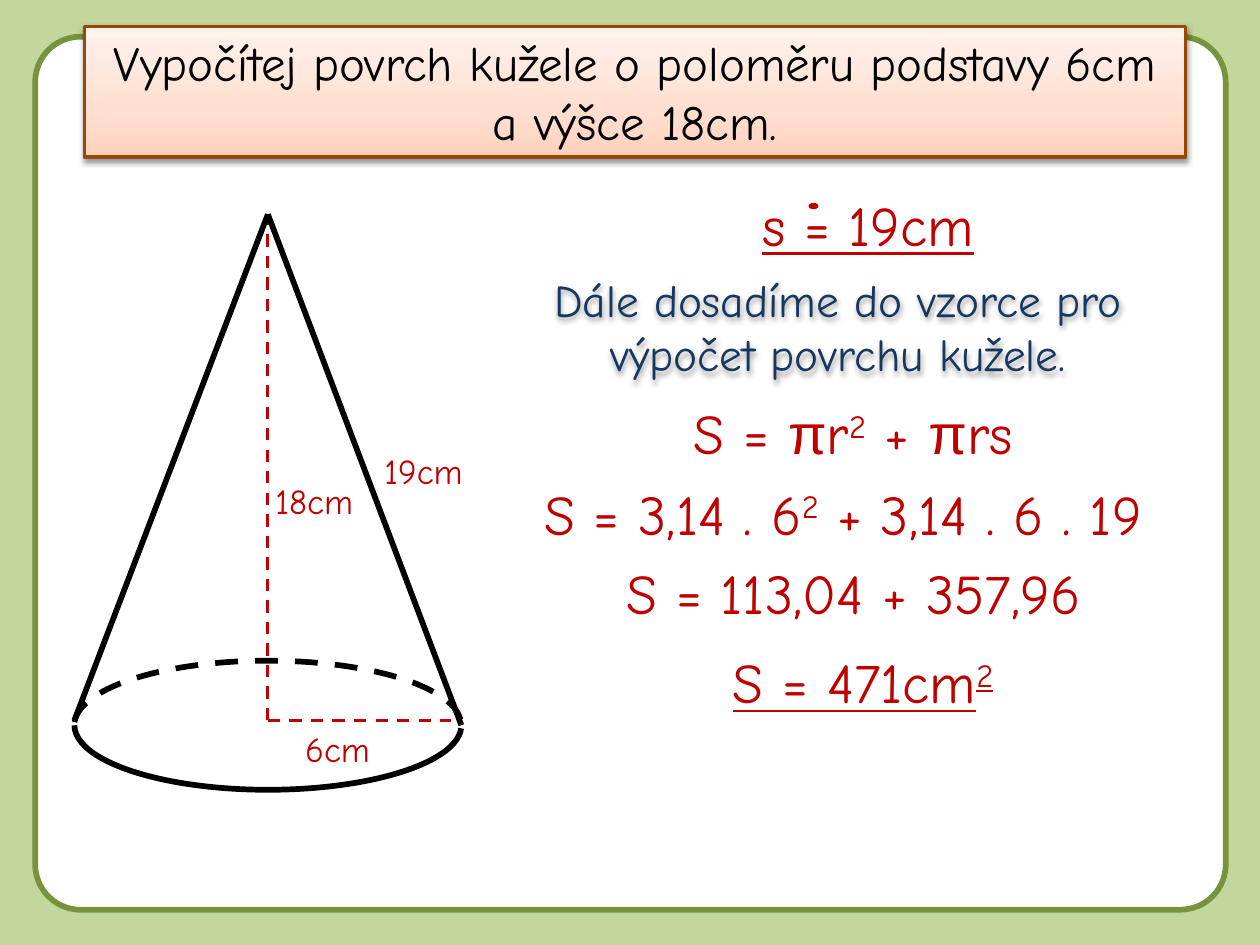
from copy import deepcopy
from dataclasses import dataclass

from lxml.etree import SubElement as Sub
from pptx import Presentation
from pptx.dml.color import RGBColor as RGB
from pptx.enum.dml import MSO_LINE as Dash
from pptx.enum.shapes import MSO_CONNECTOR as Link, MSO_SHAPE as Kind
from pptx.enum.text import MSO_ANCHOR as Anchor, PP_ALIGN as Align
from pptx.oxml.ns import qn
from pptx.util import Cm, Pt


@dataclass(frozen=True)
class Theme:
    font: str = "Comic Neue"
    greek: str = "Arial"
    back: str = "C3D69B"
    edge: str = "77933C"
    white: str = "FFFFFF"
    black: str = "000000"
    red: str = "C00000"
    navy: str = "17375E"
    brown: str = "984807"
    peach: tuple = ((0, "FFD2BD"), (0.35, "FFDED0"), (1, "FFF2ED"))
    head: int = 28
    note: int = 26
    math: int = 32
    label: int = 20
    thick: float = 3.25
    thin: float = 1.75


T = Theme()


def color(code):
    return RGB.from_string(code)


def paint(line, code, width, dash=None):
    line.color.rgb = color(code)
    line.width = Pt(width)
    if dash:
        line.dash_style = dash


def shade(shape):
    fx = Sub(shape.element.spPr, qn("a:effectLst"))
    drop = Sub(fx, qn("a:outerShdw"), blurRad="40000", dist="20000",
               dir="5400000", rotWithShape="0")
    tint = Sub(drop, qn("a:srgbClr"), val=T.black)
    Sub(tint, qn("a:alpha"), val="38000")


def add(slide, kind, box, fill=None):
    shape = slide.shapes.add_shape(kind, *map(Cm, box))
    shape.shadow.inherit = False
    if fill:
        shape.fill.solid()
        shape.fill.fore_color.rgb = color(fill)
    else:
        shape.fill.background()
    shape.line.fill.background()
    return shape


def join(slide, start, end, code, width, dash=None):
    line = slide.shapes.add_connector(Link.STRAIGHT, *map(Cm, start + end))
    Sub(line.element.spPr, qn("a:effectLst"))
    paint(line.line, code, width, dash)


def write(shape, text, size, code, align=Align.CENTER, under=None):
    frame = shape.text_frame
    frame.word_wrap = True
    frame.vertical_anchor = Anchor.MIDDLE
    para = frame.paragraphs[0]
    para.alignment = align
    for part in text.split("|"):
        run = para.add_run()
        run.text = part
        font = run.font
        font.name = T.greek if part == "π" else T.font
        font.size = Pt(size)
        font.color.rgb = color(code)
        font.underline = under
        if part == "2":
            run._r.get_or_add_rPr().set("baseline", "30000")


def panel(slide, box):
    shape = add(slide, Kind.ROUNDED_RECTANGLE, box, T.white)
    shape.adjustments[0] = 0.052
    paint(shape.line, T.edge, T.thick)
    slide.shapes.element.insert(2, shape.element)


def banner(slide, box, text):
    title = slide.shapes.title
    title.left, title.top, title.width, title.height = map(Cm, box)
    fill = title.fill
    fill.gradient()
    fill.gradient_angle = 90
    stops = title.element.spPr.find(".//" + qn("a:gsLst"))
    stops.insert(1, deepcopy(stops[0]))
    for stop, (place, code) in zip(fill.gradient_stops, T.peach):
        stop.position = place
        stop.color.rgb = color(code)
    paint(title.line, T.brown, 2)
    shade(title)
    write(title, text, T.head, T.black)


def cone(slide, box):
    x, y, w, h = box
    oval = 2.6
    mid, base = x + w / 2, y + h - oval / 2 - 0.1
    tip = (mid, y)
    for text, dx, dy, fill in (("18cm", 3.8, 5.2, None),
                               ("6cm", 4.4, 10.2, T.white),
                               ("19cm", 6, 4.6, None)):
        label = add(slide, Kind.RECTANGLE, (x + dx, y + dy, 2.3, 1.12), fill)
        write(label, text, T.label, T.red, Align.LEFT)
    for end in (tip, (x + w - 0.2, base)):
        join(slide, (mid, base), end, T.red, T.thin, Dash.DASH)
    for turn, dash in ((0, Dash.DASH), (180, None)):
        arc = add(slide, Kind.ARC, (x, y + h - oval, w, oval))
        arc.adjustments[0] = 108.54
        arc.adjustments[1] = 0
        arc.rotation = turn
        paint(arc.line, T.black, T.thick, dash)
    for end in ((x, base), (x + w, base + 0.1)):
        join(slide, tip, end, T.black, T.thick)


def steps(slide, box):
    x, y, w, h = box
    note = add(slide, Kind.RECTANGLE, (x + 0.4, y + 1.62, 14, 2.49))
    shade_box = note.element.spPr
    shade_box.remove(shade_box.find(qn("a:effectLst")))
    shade(note)
    write(note, "Dále dosadíme do vzorce pro výpočet povrchu kužele.",
          T.note, T.navy)
    rows = (("s = 19cm", 3.2, 0, 9.6, True),
            ("S = |π|r|2| + |π|rs", 1.2, 4.2, 13, None),
            ("S = 113,04 + 357,96 ", 1.4, 7.42, 13, None),
            ("S = 3,14 . 6|2| + 3,14 . 6 . 19", 0, 5.82, w, None),
            ("S = 471cm|2", 1.4, 9.22, 13, True))
    for text, dx, dy, width, under in rows:
        row = add(slide, Kind.RECTANGLE, (x + dx, y + dy, width, h), T.white)
        write(row, text, T.math, T.red, under=under)
    add(slide, Kind.OVAL, (x + 6.8, y + 0.38, 0.2, 0.13), T.red)


def main():
    deck = Presentation()
    deck.slide_width, deck.slide_height = Cm(25.4), Cm(19.05)
    slide = deck.slides.add_slide(deck.slide_layouts[5])
    back = slide.background.fill
    back.solid()
    back.fore_color.rgb = color(T.back)
    panel(slide, (0.71, 0.74, 24, 17.6))
    banner(slide, (1.7, 0.53, 22.2, 2.64),
           "Vypočítej povrch kužele o poloměru podstavy 6cm a výšce 18cm.")
    cone(slide, (1.5, 4.32, 7.8, 11.6))
    steps(slide, (9.5, 3.71, 15, 1.62))
    deck.save("out.pptx")


if __name__ == "__main__":
    main()
